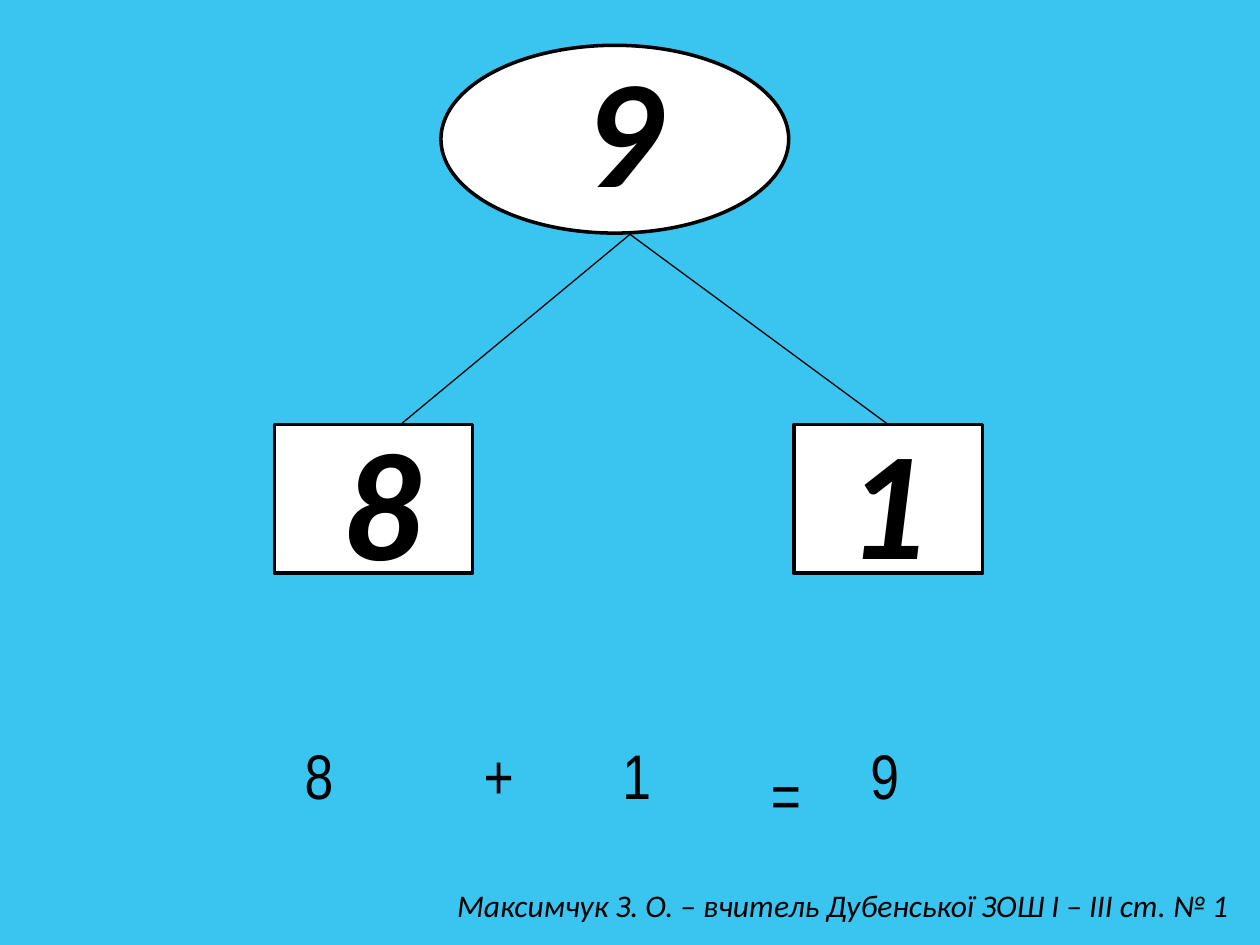
from pptx import Presentation
from pptx.dml.color import RGBColor
from pptx.enum.shapes import MSO_CONNECTOR, MSO_SHAPE
from pptx.enum.text import MSO_ANCHOR, PP_ALIGN
from pptx.oxml.ns import qn
from pptx.util import Inches, Pt
from lxml import etree

OVAL, RECTANGLE = MSO_SHAPE.OVAL, MSO_SHAPE.RECTANGLE
STRAIGHT = MSO_CONNECTOR.STRAIGHT
TOP, MIDDLE = MSO_ANCHOR.TOP, MSO_ANCHOR.MIDDLE
LEFT, CENTER = PP_ALIGN.LEFT, PP_ALIGN.CENTER
BLACK, WHITE, SKY = "000000", "FFFFFF", "3AC5F0"
BLANK_LAYOUT = 6


def color(value):
    return RGBColor.from_string(value)


def write(box, text, size=88, font="Calibri", bold=True, italic=True,
          align=LEFT, anchor=TOP, indent=0.1):
    frame = box.text_frame
    frame.word_wrap = True
    frame.vertical_anchor = anchor
    frame.margin_left = Inches(indent)
    para = frame.paragraphs[0]
    para.alignment = align
    span = para.add_run()
    span.text = text
    span.font.size = Pt(size)
    span.font.name = font
    span.font.bold = bold
    span.font.italic = italic
    span.font.color.rgb = color(BLACK)


deck = Presentation()
deck.slide_width, deck.slide_height = Inches(10), Inches(7.5)
page = deck.slides.add_slide(deck.slide_layouts[BLANK_LAYOUT])
page.background.fill.solid()
page.background.fill.fore_color.rgb = color(SKY)

# Oval for the whole and rectangles for its two parts
outlines = []
for kind, *place in [
    (OVAL, 3.5, 0.36, 2.76, 1.49),
    (RECTANGLE, 2.18, 3.37, 1.57, 1.18),
    (RECTANGLE, 6.3, 3.37, 1.5, 1.18),
]:
    outline = page.shapes.add_shape(kind, *map(Inches, place))
    outline.shadow.inherit = False
    outline.fill.solid()
    outline.fill.fore_color.rgb = color(WHITE)
    outline.line.color.rgb = color(BLACK)
    outline.line.width = Pt(2)
    outlines.append(outline)
whole, left_part, right_part = outlines

# Branches from the whole to its parts
for end_x in (3.19, 7.05):
    branch = page.shapes.add_connector(
        STRAIGHT, Inches(5), Inches(1.86), Inches(end_x), Inches(3.36))
    branch.line.color.rgb = color(BLACK)
    branch.line.width = Pt(0.75)
    etree.SubElement(branch._element.spPr, qn("a:effectLst"))
branch.end_connect(right_part, 0)

# Large digits
write(left_part, "8", anchor=MIDDLE, indent=0.55)
for digit, *place in [("9", 4.53, 0.22, 0.58, 1.58), ("1", 6.63, 3.17, 0.83, 1.58)]:
    write(page.shapes.add_textbox(*map(Inches, place)), digit)

# Equation
for symbol, left, top in [
    ("8", 2.32, 5.8), ("+", 3.74, 5.8), ("1", 4.84, 5.8),
    ("=", 6.02, 5.95), ("9", 6.81, 5.8),
]:
    box = page.shapes.add_textbox(Inches(left), Inches(top), Inches(0.79), Inches(0.7))
    write(box, symbol, size=36, font="Arial Narrow", bold=False, italic=False)

# Author line
author = page.shapes.add_textbox(Inches(3.5), Inches(6.98), Inches(6.38), Inches(0.4))
write(author, "Максимчук З. О. – вчитель Дубенської ЗОШ І – ІІІ ст. № 1",
      size=18, bold=False, align=CENTER)

deck.save("out.pptx")
